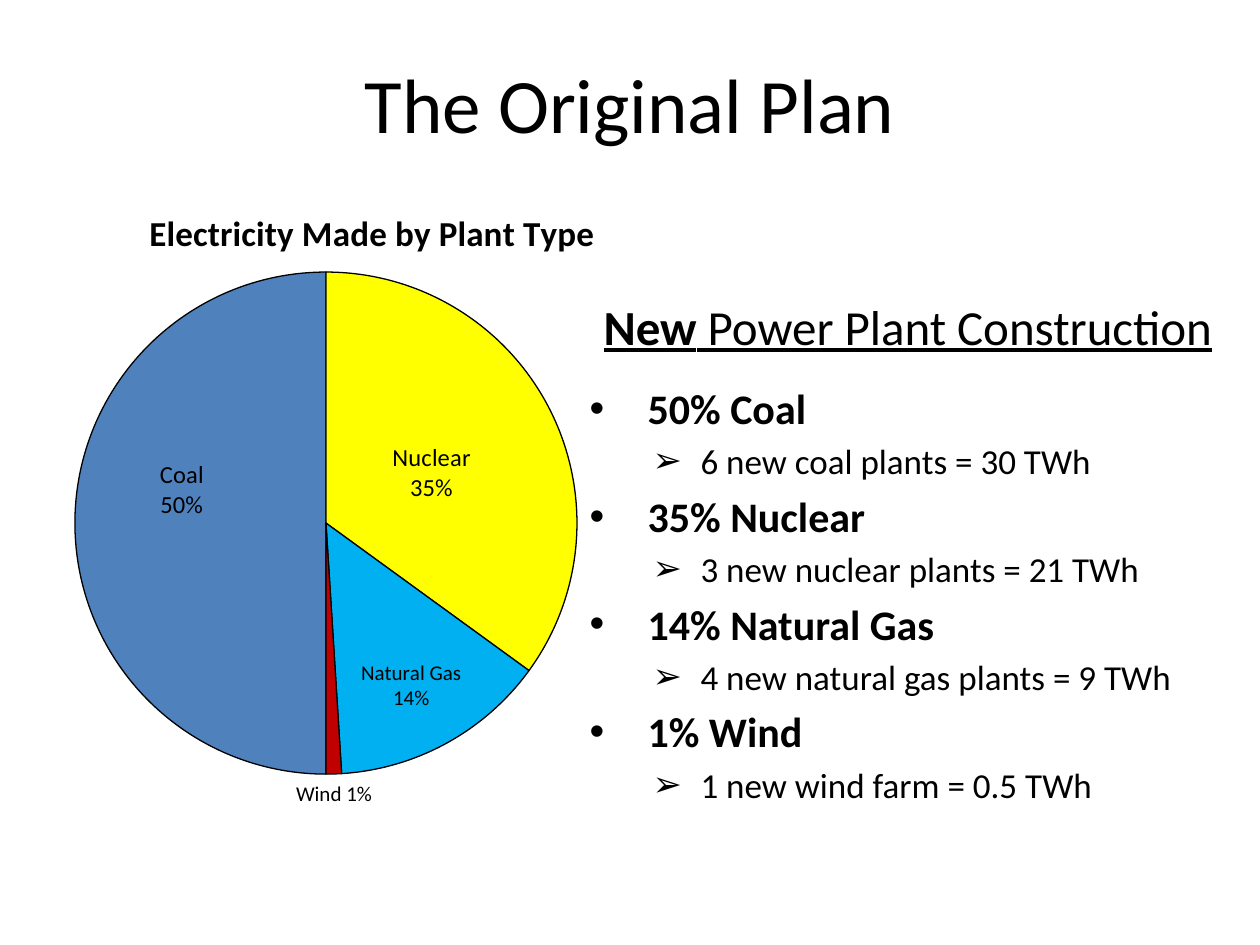
import pptx
import pptx.chart.data
import pptx.dml.color
import pptx.enum.chart
import pptx.enum.text
import pptx.oxml
import pptx.oxml.ns
import pptx.util
from pptx.util import Inches, Pt

FONT = "Calibri"
COLORS = {"text": "000000", "Coal": "4F81BD", "Nuclear": "FFFF00",
          "Natural Gas": "00B0F0", "Wind": "C00000"}
TITLE = "The Original Plan"
HEADING = ("New", " Power Plant Construction")
PLANS = [
    ("50% Coal", "6 new coal plants = 30 TWh"),
    ("35% Nuclear", "3 new nuclear plants = 21 TWh"),
    ("14% Natural Gas", "4 new natural gas plants = 9 TWh"),
    ("1% Wind", "1 new wind farm = 0.5 TWh"),
]
CHART_TITLE = "Electricity Made by Plant Type"
POSITION = pptx.enum.chart.XL_LABEL_POSITION
# plant type, share, label size, label position, label offset, label separator
SHARES = [
    ("Coal", 0.5, 14, POSITION.CENTER, (-0.03, -0.05), "\n"),
    ("Nuclear", 0.35, 14, POSITION.CENTER, (-0.01, 0.01), "\n"),
    ("Natural Gas", 0.14, 12, POSITION.CENTER, (0.04, 0.08), "\n"),
    ("Wind", 0.01, 12, POSITION.OUTSIDE_END, None, " "),
]


def rgb(name):
    return pptx.dml.color.RGBColor.from_string(COLORS[name])


def style(font, size, bold=False):
    font.name, font.size, font.bold = FONT, Pt(size), bold
    font.color.rgb = rgb("text")


def place(shape, left, top, width, height):
    shape.left, shape.top = Inches(left), Inches(top)
    shape.width, shape.height = Inches(width), Inches(height)


def set_bullet(paragraph, margin, indent, bullet=None):
    properties = paragraph._p.get_or_add_pPr()
    properties.set("marL", str(Inches(margin)))
    properties.set("indent", str(Inches(indent)))
    tag = f'a:buChar char="{bullet}"' if bullet else "a:buNone"
    properties.append(pptx.oxml.parse_xml(
        f'<{tag} {pptx.oxml.ns.nsdecls("a")}/>'.replace("/>", "/>")))


def chart_xml(markup):
    tag, rest = markup.split(">", 1)
    return pptx.oxml.parse_xml(f'{tag} {pptx.oxml.ns.nsdecls("c")}>{rest}')


def manual_layout(x, y, size=None, edge=False):
    parts = '<c:layoutTarget val="inner"/>' if size else ""
    if edge:
        parts += '<c:xMode val="edge"/><c:yMode val="edge"/>'
    parts += f'<c:x val="{x}"/><c:y val="{y}"/>'
    if size:
        parts += f'<c:w val="{size[0]}"/><c:h val="{size[1]}"/>'
    return chart_xml(f"<c:layout><c:manualLayout>{parts}</c:manualLayout></c:layout>")


def replace_layout(parent, layout, index):
    for old in parent.findall(pptx.oxml.ns.qn("c:layout")):
        parent.remove(old)
    parent.insert(index, layout)


def add_plans(body):
    place(body, 4.58, 2.3, 5.25, 4.29)
    frame = body.text_frame
    frame.auto_size = pptx.enum.text.MSO_AUTO_SIZE.SHAPE_TO_FIT_TEXT
    heading = frame.paragraphs[0]
    heading.alignment = pptx.enum.text.PP_ALIGN.CENTER
    heading.space_after = Pt(11)
    set_bullet(heading, 0, 0)
    for text, bold in zip(HEADING, (True, False)):
        run = heading.add_run()
        run.text = text
        style(run.font, 28, bold)
        run.font.underline = True
    for share, plants in PLANS:
        for level, text in enumerate((share, plants)):
            item = frame.add_paragraph()
            item.text, item.level = text, level
            if level == 0:
                set_bullet(item, 0.46, -0.46, "•")
                style(item.font, 24, True)
            else:
                set_bullet(item, 0.88, -0.38, "➢")
                style(item.font, 20)


def add_pie(slide):
    data = pptx.chart.data.CategoryChartData(number_format="0%")
    data.categories = [share[0] for share in SHARES]
    data.add_series("Series 1", [share[1] for share in SHARES])
    chart = slide.shapes.add_chart(
        pptx.enum.chart.XL_CHART_TYPE.PIE, Inches(0.25), Inches(1.5),
        Inches(4.92), Inches(5.2), data).chart
    style(chart.font, 10)
    chart.has_legend = False

    # Chart title and plot area
    heading = chart.chart_title.text_frame.paragraphs[0]
    heading.text = CHART_TITLE
    style(heading.font, 20, True)
    title_xml = chart.chart_title._element
    replace_layout(title_xml, manual_layout(0.18, 0.02, edge=True), 1)
    area = chart._chartSpace.chart.plotArea
    replace_layout(area, manual_layout(0.07, 0.08, (0.81, 0.86), True), 0)

    # Slices start at the bottom
    pie = chart.plots[0]
    pie.vary_by_categories = True
    for old in pie._element.findall(pptx.oxml.ns.qn("c:firstSliceAng")):
        pie._element.remove(old)
    pie._element.append(chart_xml('<c:firstSliceAng val="180"></c:firstSliceAng>'))

    series = pie.series[0]
    labels = series.data_labels
    labels.show_value = labels.show_category_name = True
    labels.number_format, labels.number_format_is_linked = "0%", False
    style(labels.font, 11)
    for index, (plant, _, size, position, offset, separator) in enumerate(SHARES):
        point = series.points[index]
        point.format.fill.solid()
        point.format.fill.fore_color.rgb = rgb(plant)
        point.format.line.color.rgb = rgb("text")
        point.format.line.width = Pt(0.75)
        style(point.data_label.font, size)
        point.data_label.position = position
        label = labels._element.xpath(f'c:dLbl[c:idx/@val="{index}"]')[0]
        label.find(pptx.oxml.ns.qn("c:showCatName")).set("val", "1")
        label.find(pptx.oxml.ns.qn("c:showPercent")).set("val", "0")
        label.insert(1, chart_xml(
            '<c:numFmt formatCode="0%" sourceLinked="0"></c:numFmt>'))
        if offset:
            label.insert(1, manual_layout(*offset))
        label.append(chart_xml(f"<c:separator>{separator}</c:separator>"))


def main():
    deck = pptx.Presentation()
    deck.slide_width, deck.slide_height = Inches(10), Inches(7.5)
    slide = deck.slides.add_slide(deck.slide_layouts[1])

    # Title
    title = slide.shapes.title
    place(title, 0.5, 0.3, 9, 1.03)
    title.text_frame.text = TITLE
    style(title.text_frame.paragraphs[0].font, 44)

    add_plans(slide.placeholders[1])
    add_pie(slide)
    deck.save("out.pptx")


if __name__ == "__main__":
    main()
